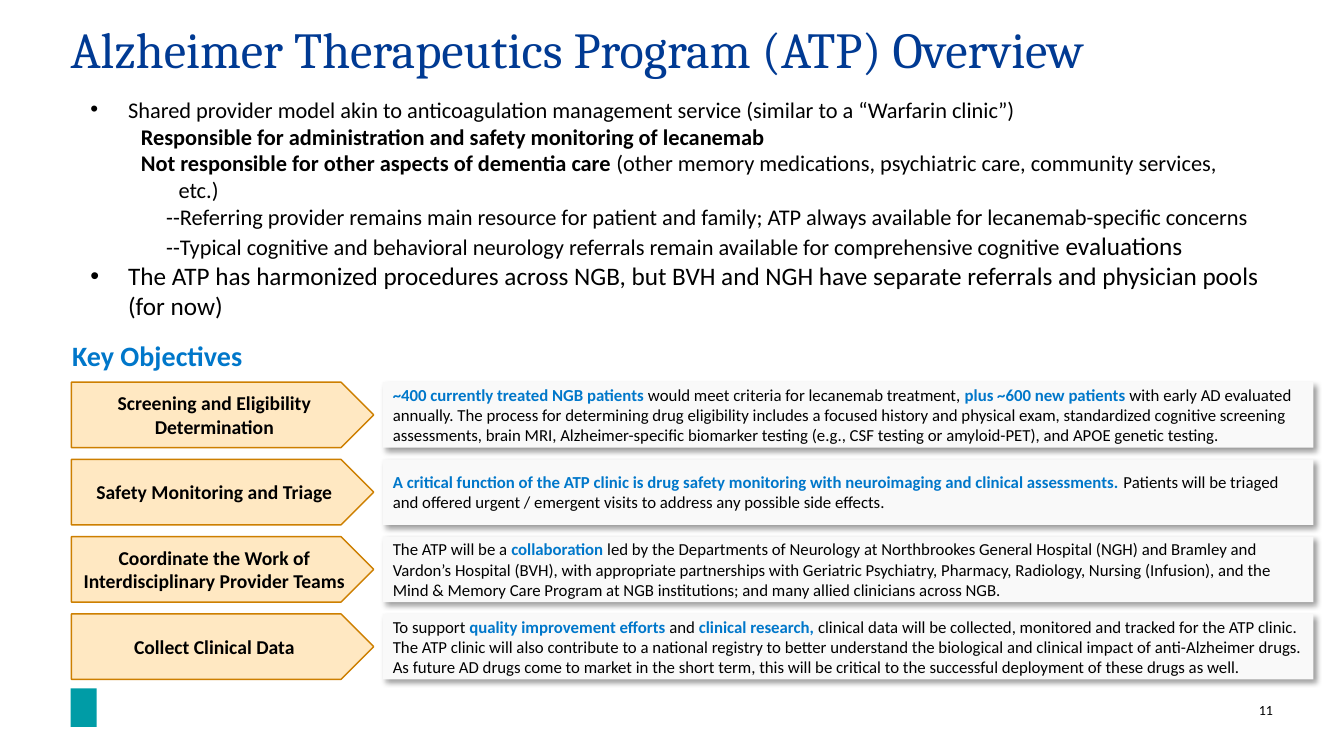
from lxml import etree
from pptx import Presentation
from pptx import util as u
from pptx.dml.color import RGBColor
from pptx.enum import shapes, text
from pptx.oxml import parse_xml
from pptx.oxml.ns import nsdecls, qn

BLACK, BLUE, NAVY, TEAL = "000000", "0077CA", "003A93", "009CA6"
SAND, AMBER, PALE = "FFE8C2", "CD7F00", "F9F9F9"
BODY_FONT, TITLE_FONT = "Calibri", "Cambria"

# Bullet paragraphs: level, bulleted, runs of (text, size, bold)
OVERVIEW = [
    (0, True, [("Shared provider model akin to anticoagulation management service "
                "(similar to a “Warfarin clinic”)", 16, False)]),
    (1, False, [("Responsible for administration and safety monitoring of lecanemab", 16, True)]),
    (1, False, [("Not responsible for other aspects of dementia care ", 16, True),
                ("(other memory medications, psychiatric care, community services, etc.)", 16, False)]),
    (2, False, [("--Referring provider remains main resource for patient and family; "
                 "ATP always available for lecanemab-specific concerns", 16, False)]),
    (2, False, [("--Typical cognitive and behavioral neurology referrals remain available "
                 "for comprehensive cognitive ", 16, False),
                ("evaluations", 18, False)]),
    (0, True, [("The ATP has harmonized procedures across NGB, but BVH and NGH have "
                "separate referrals and physician pools (for now)", 18, False)]),
]
LEVEL_MARGINS = [0.95, 2.22, 2.86]

# Objective rows: label, runs of (text, highlighted)
OBJECTIVES = [
    ("Screening and Eligibility Determination", [
        ("~400 currently treated NGB patients", True),
        (" would meet criteria for lecanemab treatment, ", False),
        ("plus ~600 new patients ", True),
        ("with early AD evaluated annually. The process for determining drug eligibility "
         "includes a focused history and physical exam, standardized cognitive screening "
         "assessments, brain MRI, Alzheimer-specific biomarker testing (e.g., CSF testing "
         "or amyloid-PET), and APOE genetic testing.", False)]),
    ("Safety Monitoring and Triage", [
        ("A critical function of the ATP clinic is drug safety monitoring with "
         "neuroimaging and clinical assessments.", True),
        (" Patients will be triaged and offered urgent / emergent visits to address any "
         "possible side effects.", False)]),
    ("Coordinate the Work of Interdisciplinary Provider Teams", [
        ("The ATP will be a ", False),
        ("collaboration", True),
        (" led by the Departments of Neurology at Northbrookes General Hospital (NGH) and "
         "Bramley and Vardon’s Hospital (BVH), with appropriate partnerships with Geriatric "
         "Psychiatry, Pharmacy, Radiology, Nursing (Infusion), and the Mind & Memory Care "
         "Program at NGB institutions; and many allied clinicians across NGB.", False)]),
    ("Collect Clinical Data", [
        ("To support ", False),
        ("quality improvement efforts ", True),
        ("and ", False),
        ("clinical research, ", True),
        ("clinical data will be collected, monitored and tracked for the ATP clinic. The ATP "
         "clinic will also contribute to a national registry to better understand the "
         "biological and clinical impact of anti-Alzheimer drugs. As future AD drugs come to "
         "market in the short term, this will be critical to the successful deployment of "
         "these drugs as well.", False)]),
]


def rgb(value):
    return RGBColor.from_string(value)


def add_run(p, content, size, color=BLACK, bold=False, font=BODY_FONT):
    r = p.add_run()
    r.text = content
    r.font.name, r.font.size, r.font.bold = font, u.Pt(size), bold
    r.font.color.rgb = rgb(color)


def text_box(slide, box, inset=True, wrap=True):
    """Add a text box at box (left, top, width, height in cm) and return its frame."""
    tf = slide.shapes.add_textbox(*map(u.Cm, box)).text_frame
    tf.word_wrap = wrap
    if not inset:
        tf.margin_left = tf.margin_right = tf.margin_top = tf.margin_bottom = 0
    return tf


def filled_shape(slide, kind, box, fill, line=None):
    sp = slide.shapes.add_shape(kind, *map(u.Cm, box))
    sp.shadow.inherit = False
    sp.fill.solid()
    sp.fill.fore_color.rgb = rgb(fill)
    if line:
        sp.line.color.rgb = rgb(line)
        sp.line.width = u.Pt(1)
    else:
        sp.line.fill.background()
    sp.text_frame.word_wrap = True
    sp.text_frame.vertical_anchor = text.MSO_ANCHOR.MIDDLE
    return sp


def cast_shadow(sp):
    """Give the shape a soft shadow to the lower right."""
    effects = sp._element.spPr.find(qn("a:effectLst"))
    effects.append(parse_xml(
        f'<a:outerShdw {nsdecls("a")} blurRad="{u.Pt(4)}" dist="{u.Pt(3)}" dir="2700000" '
        f'algn="tl" rotWithShape="0"><a:srgbClr val="{BLACK}"><a:alpha val="40000"/>'
        '</a:srgbClr></a:outerShdw>'))


def add_title(slide, box):
    p = text_box(slide, box, inset=False).paragraphs[0]
    p.line_spacing = 0.9
    add_run(p, "Alzheimer Therapeutics Program (ATP) Overview", 36, NAVY, font=TITLE_FONT)


def add_overview(slide, box):
    tf = text_box(slide, box)
    for i, (level, bulleted, runs) in enumerate(OVERVIEW):
        p = tf.add_paragraph() if i else tf.paragraphs[0]
        p.level = level
        pPr = p._p.get_or_add_pPr()
        pPr.set("marL", str(u.Cm(LEVEL_MARGINS[level])))
        pPr.set("indent", str(-u.Cm(LEVEL_MARGINS[0])))
        if bulleted:
            etree.SubElement(pPr, qn("a:buFont"), typeface="Arial")
            etree.SubElement(pPr, qn("a:buChar"), char="•")
        for content, size, bold in runs:
            add_run(p, content, size, bold=bold)


def add_objective(slide, box, label, runs):
    """Place a label arrow and, to its right, the shadowed description."""
    left, top, width, height = box
    arrow_width, gap = 7.62, 0.23
    arrow = filled_shape(slide, shapes.MSO_SHAPE.PENTAGON,
                         (left, top, arrow_width, height), SAND, AMBER)
    p = arrow.text_frame.paragraphs[0]
    p.alignment = text.PP_ALIGN.CENTER
    add_run(p, label, 14, bold=True)

    offset = arrow_width + gap
    panel = filled_shape(slide, shapes.MSO_SHAPE.RECTANGLE,
                         (left + offset, top, width - offset, height), PALE)
    cast_shadow(panel)
    p = panel.text_frame.paragraphs[0]
    p.alignment = text.PP_ALIGN.LEFT
    for content, highlighted in runs:
        add_run(p, content, 12, BLUE if highlighted else BLACK, highlighted)


def add_objectives(slide, box):
    left, top, width, height = box
    heading_height, row_height = 1.22, 1.65
    heading = text_box(slide, (left - 0.23, top, 4.88, 1.12), wrap=False)
    add_run(heading.paragraphs[0], "Key Objectives", 20, BLUE, True)
    first = top + heading_height
    pitch = (height - heading_height - row_height) / (len(OBJECTIVES) - 1)
    for i, (label, runs) in enumerate(OBJECTIVES):
        add_objective(slide, (left, first + i * pitch, width, row_height), label, runs)


def add_footer(slide, box):
    left, top, width, height = box
    filled_shape(slide, shapes.MSO_SHAPE.RECTANGLE, (left, top, 0.66, height), TEAL)
    number_width = 0.97
    p = text_box(slide, (left + width - number_width, top + 0.33, number_width, 0.43),
                 inset=False).paragraphs[0]
    p.alignment = text.PP_ALIGN.RIGHT
    add_run(p, "11", 10)


def main():
    prs = Presentation()
    prs.slide_width, prs.slide_height = u.Cm(33.87), u.Cm(19.05)
    slide = prs.slides.add_slide(prs.slide_layouts[6])
    add_title(slide, (1.78, 0.64, 30.28, 2.67))
    add_overview(slide, (2.03, 2.29, 29.97, 6.76))
    add_objectives(slide, (1.8, 8.41, 31.3, 8.71))
    add_footer(slide, (1.78, 17.35, 30.3, 0.97))
    prs.save("out.pptx")


if __name__ == "__main__":
    main()
